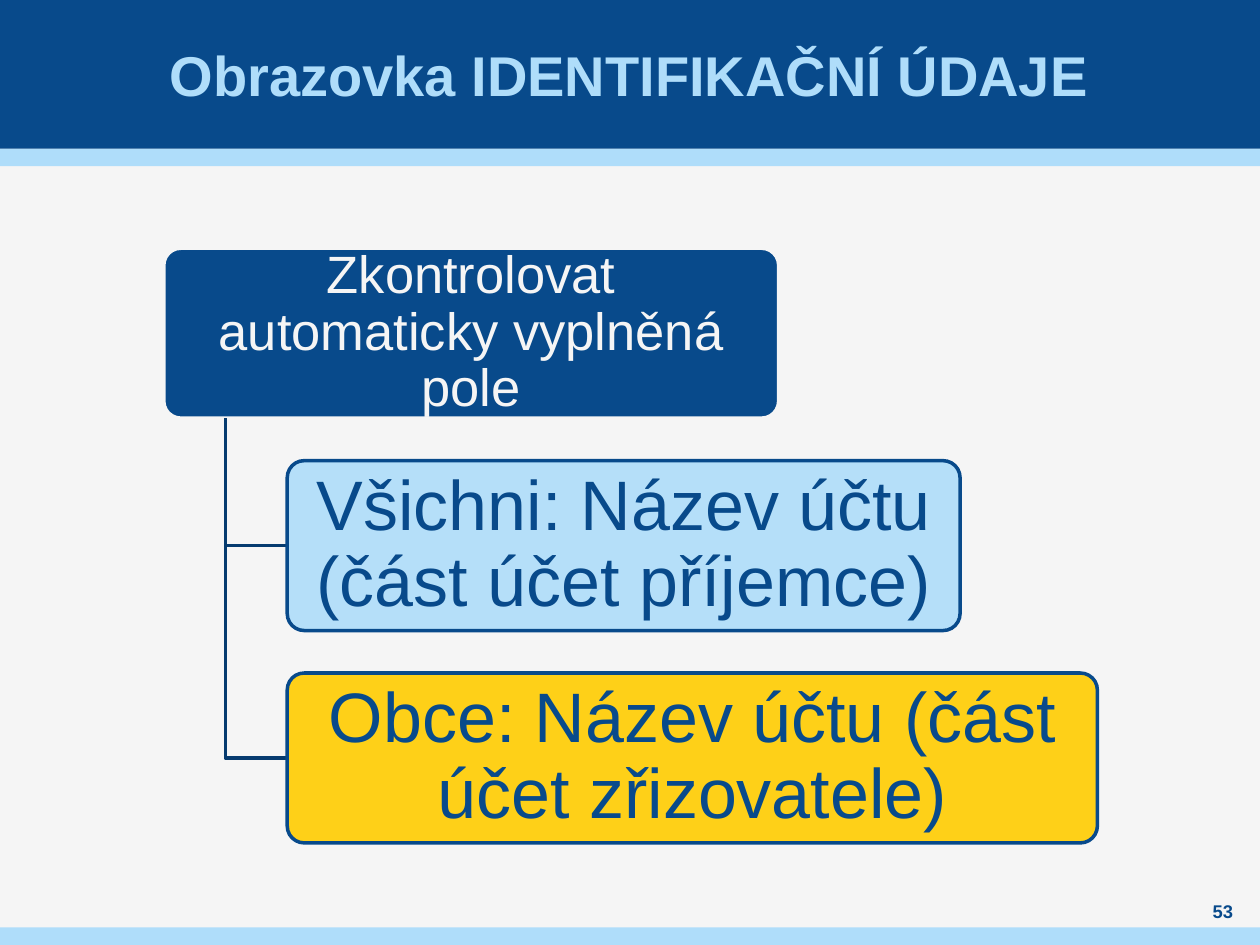
import pptx
import pptx.util
import pptx.dml.color
import pptx.enum.shapes
import pptx.enum.text
import pptx.oxml.ns
import lxml.etree

Inches = pptx.util.Inches
Pt = pptx.util.Pt
RGBColor = pptx.dml.color.RGBColor
SHAPE = pptx.enum.shapes.MSO_SHAPE

NAVY = RGBColor(0x08, 0x4A, 0x8B)
DARK_NAVY = RGBColor(0x06, 0x3B, 0x6F)
SKY = RGBColor(0xAF, 0xDD, 0xFA)
YELLOW = RGBColor(0xFF, 0xCC, 0x00)
PALE = RGBColor(0xF5, 0xF5, 0xF5)

WIDTH, HEIGHT = 10, 7.5
HEADER = 1.18
STRIPE = 0.14

# Hierarchy: text, left, width, fill, opacity in %, line, text colour, size, insets
ROOT = ("Zkontrolovat automaticky vyplněná pole",
        0, 4.88, NAVY, 100, PALE, PALE, 30, (0.1, 0.08))
CHILDREN = [
    ("Všichni: Název účtu (část účet příjemce)",
     0.98, 5.34, SKY, 90, NAVY, NAVY, 40, (0.12, 0.1)),
    ("Obce: Název účtu (část účet zřizovatele)",
     0.98, 6.43, YELLOW, 90, NAVY, NAVY, 40, (0.12, 0.1)),
]


def write_text(shape, text, size, color, bold=False, insets=(0, 0)):
    """Write one centred paragraph in the shape and return it."""
    frame = shape.text_frame
    frame.text = text
    frame.word_wrap = True
    frame.auto_size = pptx.enum.text.MSO_AUTO_SIZE.NONE
    frame.vertical_anchor = pptx.enum.text.MSO_ANCHOR.MIDDLE
    frame.margin_left = frame.margin_right = Inches(insets[0])
    frame.margin_top = frame.margin_bottom = Inches(insets[1])
    para = frame.paragraphs[0]
    para.alignment = pptx.enum.text.PP_ALIGN.CENTER
    font = para.runs[0].font
    font.name, font.size, font.bold = "Arial", Pt(size), bold
    font.color.rgb = color
    return para


def add_band(page, top, height, color):
    band = page.shapes.add_shape(
        SHAPE.RECTANGLE, 0, Inches(top), Inches(WIDTH), Inches(height))
    band.shadow.inherit = False
    band.fill.solid()
    band.fill.fore_color.rgb = color
    band.line.fill.background()


def add_header(page, height):
    add_band(page, height, STRIPE, SKY)
    add_band(page, 0, height, NAVY)
    title = page.shapes.title
    title.left, title.top = Inches(0.39), 0
    title.width, title.height = Inches(9.21), Inches(height)
    write_text(title, "Obrazovka IDENTIFIKAČNÍ ÚDAJE", 32, SKY, True, (0.04, 0))
    # Bring the title in front of the bands
    page.shapes.element.append(title.element)


def add_footer(page, top):
    add_band(page, top, STRIPE, SKY)
    number = page.shapes.add_textbox(
        Inches(9.45), Inches(top - 0.23), Inches(0.51), Inches(0.2))
    write_text(number, "53", 10.5, NAVY, True)


def add_node(page, node, left, top, height):
    text, indent, width, fill, opacity, line, color, size, insets = node
    box = page.shapes.add_shape(
        SHAPE.ROUNDED_RECTANGLE, Inches(left + indent), Inches(top),
        Inches(width), Inches(height))
    box.shadow.inherit = False
    box.adjustments[0] = 0.1
    box.fill.solid()
    box.fill.fore_color.rgb = fill
    if opacity < 100:
        qn = pptx.oxml.ns.qn
        paint = box.element.spPr.find(qn("a:solidFill")).find(qn("a:srgbClr"))
        lxml.etree.SubElement(paint, qn("a:alpha"), val=str(opacity * 1000))
    box.line.color.rgb = line
    box.line.width = Pt(2)
    write_text(box, text, size, color, insets=insets).line_spacing = 0.9


def add_branch(page, trunk, top, end, middle):
    """Draw a line down the trunk and across to the middle of a child."""
    builder = page.shapes.build_freeform(Inches(trunk), Inches(top))
    builder.add_line_segments(
        [(Inches(trunk), Inches(middle)), (Inches(end), Inches(middle))],
        close=False)
    branch = builder.convert_to_shape()
    branch.shadow.inherit = False
    branch.fill.background()
    branch.line.color.rgb = DARK_NAVY
    branch.line.width = Pt(2)


def add_hierarchy(page, left, top, height):
    """Stack the nodes with gaps of a quarter of a node's height."""
    node_height = height / (len(CHILDREN) * 1.25 + 1)
    trunk = left + ROOT[2] / 10
    add_node(page, ROOT, left, top, node_height)
    for row, child in enumerate(CHILDREN, start=1):
        child_top = top + row * node_height * 1.25
        add_branch(page, trunk, top + node_height, left + child[1],
                   child_top + node_height / 2)
        add_node(page, child, left, child_top, node_height)


def main():
    deck = pptx.Presentation()
    deck.slide_width, deck.slide_height = Inches(WIDTH), Inches(HEIGHT)
    page = deck.slides.add_slide(deck.slide_layouts.get_by_name("Title Only"))
    page.background.fill.solid()
    page.background.fill.fore_color.rgb = PALE
    add_header(page, HEADER)
    add_footer(page, HEIGHT - STRIPE)
    add_hierarchy(page, 1.3, 1.97, 4.72)
    deck.save("out.pptx")


if __name__ == "__main__":
    main()
